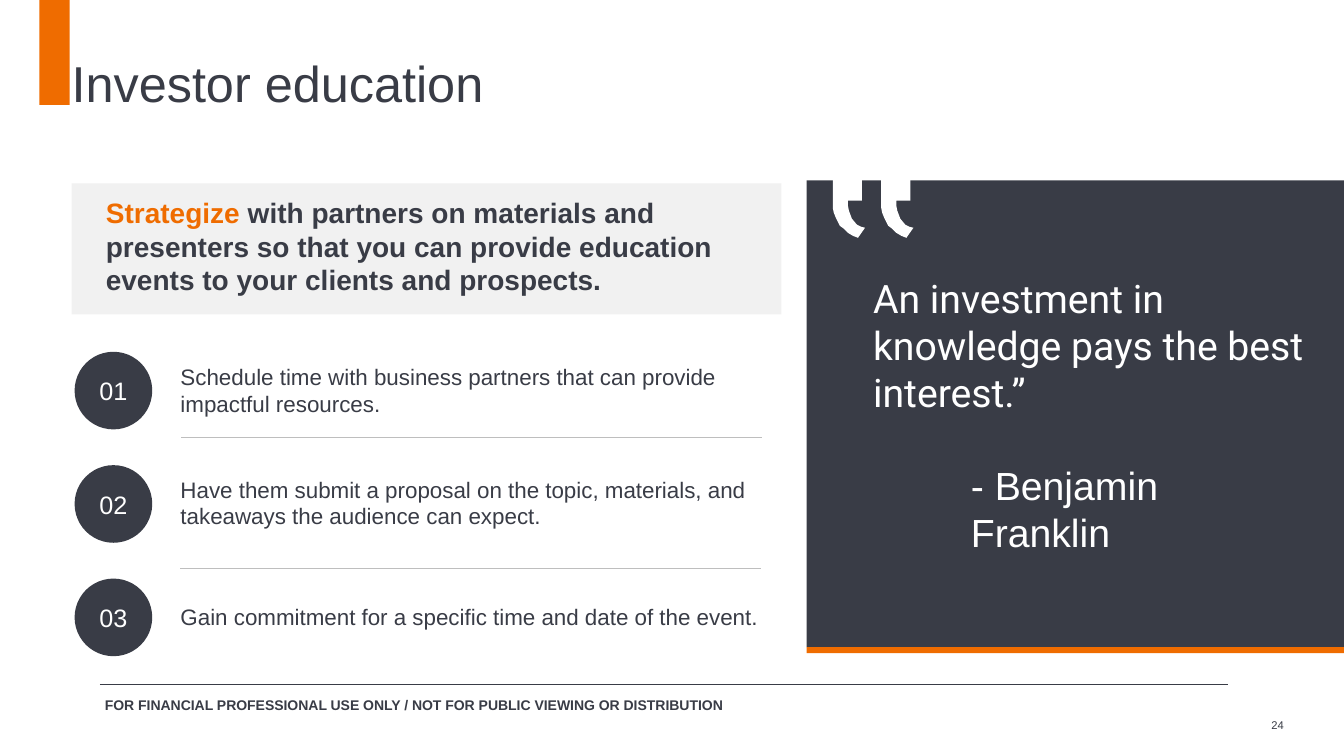
from dataclasses import dataclass

from lxml.etree import SubElement
from pptx import Presentation
from pptx.dml.color import RGBColor
from pptx.enum.shapes import MSO_CONNECTOR, MSO_SHAPE
from pptx.enum.text import MSO_ANCHOR, PP_ALIGN
from pptx.oxml.ns import qn
from pptx.shapes.autoshape import Shape
from pptx.text.text import Font, TextFrame
from pptx.util import Inches, Pt

DARK, ORANGE, PALE, GREY, WHITE = "393C46", "EF6C00", "F1F1F1", "BEBEBE", "FFFFFF"


@dataclass
class Step:
    label: str
    text: str
    width: float
    top: float


@dataclass
class Rule:
    left: float
    top: float
    width: float
    color: str


STEPS = [
    Step("01", "Schedule time with business partners that can provide\nimpactful resources.",
         5.35, 3.59),
    Step("02", "Have them submit a proposal on the topic, materials, and takeaways "
         "the audience can expect.", 5.65, 4.71),
    Step("03", "Gain commitment for a specific time and date of the event.", 5.78, 5.97),
]
RULES = [
    Rule(1.8, 4.34, 5.76, GREY),
    Rule(1.79, 5.64, 5.76, GREY),
    Rule(0.99, 6.79, 11.19, DARK),
]
STEP_TOP, STEP_GAP, DISC = 3.49, 1.125, 0.77

# Outline of one quote mark, measured from its top left corner
MARK = [(0.29, 0), (0, 0), (0, 0.36), (0.01, 0.41), (0.03, 0.46), (0.07, 0.54),
        (0.11, 0.57), (0.15, 0.61), (0.2, 0.64), (0.25, 0.66), (0.32, 0.56),
        (0.28, 0.55), (0.24, 0.53), (0.19, 0.47), (0.16, 0.39), (0.15, 0.34),
        (0.15, 0.29), (0.29, 0.29)]

deck = Presentation()
deck.slide_width, deck.slide_height = Inches(13.33), Inches(7.5)
slide = deck.slides.add_slide(deck.slide_layouts[6])
shapes = slide.shapes


def rgb(color: str) -> RGBColor:
    return RGBColor.from_string(color)


def paint(shape: Shape, color: str) -> Shape:
    shape.shadow.inherit = False
    shape.fill.solid()
    shape.fill.fore_color.rgb = rgb(color)
    shape.line.fill.background()
    return shape


def block(kind: MSO_SHAPE, left: float, top: float, width: float, height: float,
          color: str) -> Shape:
    shape = shapes.add_shape(kind, Inches(left), Inches(top), Inches(width), Inches(height))
    return paint(shape, color)


def style(font: Font, size: float, color: str, bold: bool = False,
          name: str = "Arial") -> None:
    font.name, font.size, font.bold = name, Pt(size), bold
    font.color.rgb = rgb(color)


def inset(frame: TextFrame, left: float = 0, top: float = 0) -> None:
    frame.word_wrap = True
    frame.margin_left, frame.margin_top = Inches(left), Inches(top)
    frame.margin_right = frame.margin_bottom = 0


def write(left: float, top: float, width: float, height: float, text: str, size: float,
          color: str = DARK, bold: bool = False) -> TextFrame:
    frame = shapes.add_textbox(Inches(left), Inches(top), Inches(width),
                               Inches(height)).text_frame
    inset(frame)
    frame.text = text
    for para in frame.paragraphs:
        for run in para.runs:
            style(run.font, size, color, bold)
    return frame


def draw_rule(rule: Rule) -> None:
    x, y = Inches(rule.left), Inches(rule.top)
    line = shapes.add_connector(MSO_CONNECTOR.STRAIGHT, x, y, x + Inches(rule.width), y)
    line.line.color.rgb = rgb(rule.color)
    line.line.width = Pt(0.5)
    SubElement(line._element.spPr, qn("a:effectLst"))


def draw_marks(left: float, top: float, gap: float) -> None:
    marks = [[(Inches(left + n * gap + x), Inches(top + y)) for x, y in MARK]
             for n in range(2)]
    pen = shapes.build_freeform(*marks[0][0])
    pen.add_line_segments(marks[0][1:])
    pen.move_to(*marks[1][0])
    pen.add_line_segments(marks[1][1:])
    paint(pen.convert_to_shape(), WHITE)


def draw_quote() -> None:
    block(MSO_SHAPE.RECTANGLE, 8, 1.79, 5.33, 4.63, DARK)
    block(MSO_SHAPE.RECTANGLE, 8, 6.42, 5.33, 0.06, ORANGE)
    draw_marks(8.26, 1.7, 0.48)
    frame = write(8, 2.72, 5.33, 2.37,
                  "An investment in knowledge pays the best interest.”\n- Benjamin Franklin",
                  28, WHITE)
    quote, author = frame.paragraphs
    quote.runs[0].font.name = "Roboto"
    author.space_before = Pt(33)
    for para, left, right in ((quote, 0.66, 0.3), (author, 1.63, 1.2)):
        props = para._p.get_or_add_pPr()
        props.set("marL", str(Inches(left)))
        props.set("marR", str(Inches(right)))


def draw_lead() -> None:
    frame = block(MSO_SHAPE.RECTANGLE, 0.71, 1.82, 7.04, 1.3, PALE).text_frame
    inset(frame, 0.34, 0.12)
    frame.vertical_anchor = MSO_ANCHOR.TOP
    para = frame.paragraphs[0]
    para.alignment = PP_ALIGN.LEFT
    for text, color in (("Strategize ", ORANGE),
                        ("with partners on materials and presenters so that you can "
                         "provide education events to your clients and prospects.", DARK)):
        run = para.add_run()
        run.text = text
        style(run.font, 20, color, True)


def draw_step(step: Step, top: float) -> None:
    frame = block(MSO_SHAPE.OVAL, 0.74, top, DISC, DISC, DARK).text_frame
    inset(frame)
    frame.vertical_anchor = MSO_ANCHOR.MIDDLE
    frame.text = step.label
    para = frame.paragraphs[0]
    para.alignment = PP_ALIGN.CENTER
    style(para.runs[0].font, 18, WHITE)
    write(1.79, step.top + 0.01, step.width, 0.56, step.text, 16)


def main() -> None:
    block(MSO_SHAPE.RECTANGLE, 0.39, 0, 0.3, 1.04, ORANGE)
    write(0.71, 0.52, 11.92, 1, "Investor education", 36)
    draw_quote()
    draw_lead()
    for n, step in enumerate(STEPS):
        draw_step(step, STEP_TOP + n * STEP_GAP)
    for rule in RULES:
        draw_rule(rule)
    write(1.04, 6.91, 6.3, 0.18,
          "FOR FINANCIAL PROFESSIONAL USE ONLY / NOT FOR PUBLIC VIEWING OR DISTRIBUTION",
          10, bold=True)
    write(12.61, 7.13, 0.29, 0.15, "24", 8)
    deck.save("out.pptx")


if __name__ == "__main__":
    main()
